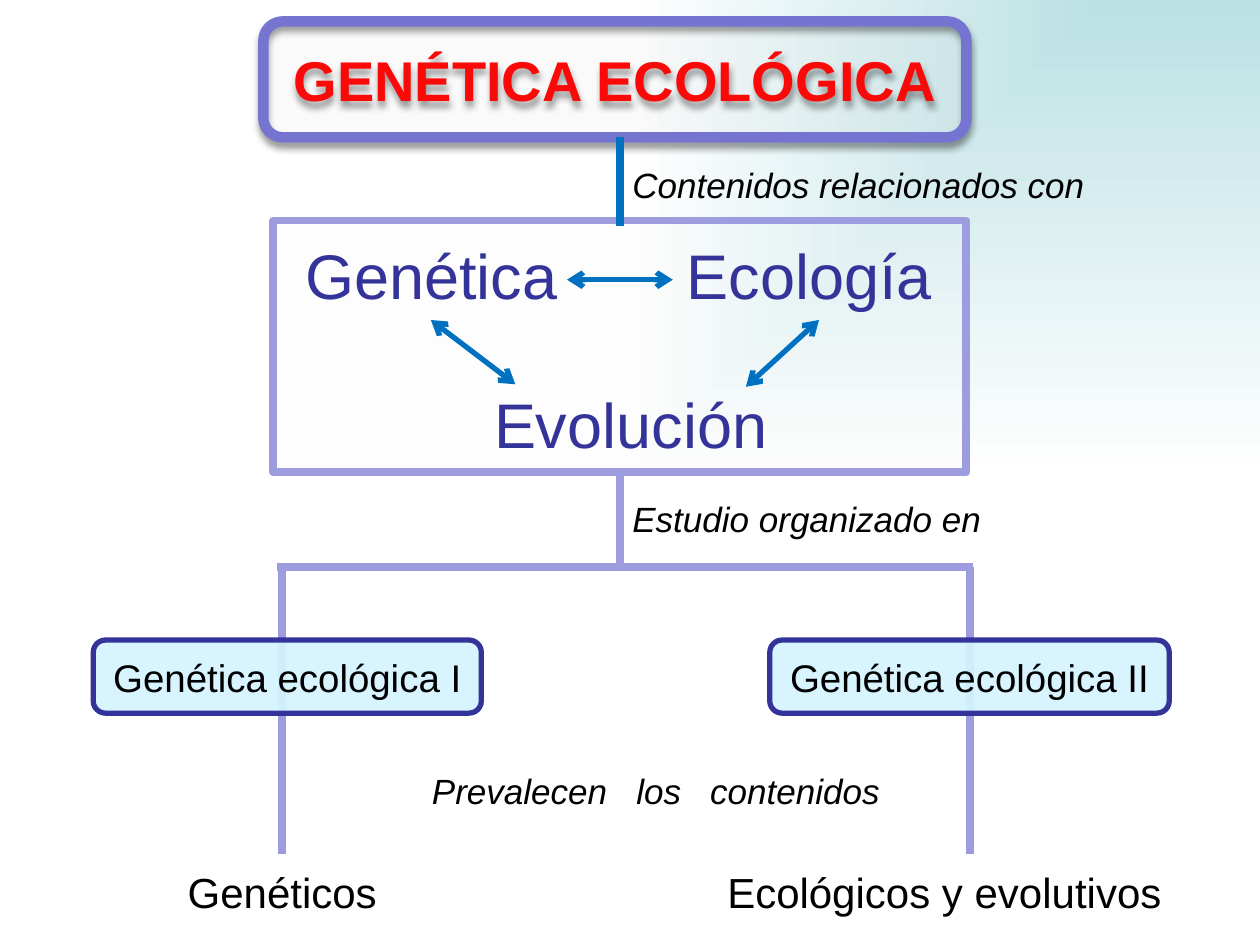
from lxml import etree
from pptx import Presentation
from pptx.dml.color import RGBColor
from pptx.enum.shapes import MSO_CONNECTOR, MSO_SHAPE
from pptx.enum.text import MSO_ANCHOR, MSO_AUTO_SIZE, PP_ALIGN
from pptx.oxml.ns import qn
from pptx.util import Inches, Pt

RECT, ROUND = MSO_SHAPE.RECTANGLE, MSO_SHAPE.ROUNDED_RECTANGLE
STRAIGHT = MSO_CONNECTOR.STRAIGHT
LEFT, CENTER = PP_ALIGN.LEFT, PP_ALIGN.CENTER
MIDDLE, TOP = MSO_ANCHOR.MIDDLE, MSO_ANCHOR.TOP
NO_FIT = MSO_AUTO_SIZE.NONE

BLACK = RGBColor(0x00, 0x00, 0x00)
WHITE = RGBColor(0xFF, 0xFF, 0xFF)
RED = RGBColor(0xFF, 0x00, 0x00)
TEAL = RGBColor(0xBB, 0xE0, 0xE3)
NAVY = RGBColor(0x33, 0x33, 0x99)
BLUE = RGBColor(0x00, 0x70, 0xC0)
LILAC = RGBColor(0x9C, 0x9C, 0xDF)
VIOLET = RGBColor(0x75, 0x75, 0xD1)
PALE = RGBColor(0xF2, 0xF2, 0xF2)
GREY = RGBColor(0xEA, 0xEA, 0xEA)
SKY = RGBColor(0xD5, 0xF4, 0xFF)

MID = 4.92
BAR = 4.5
FOOT = 6.78


def add(parent, tag, **attrs):
    return etree.SubElement(parent, qn(tag), attrs)


def paint_back(slide):
    """Fade from teal in the top right corner to white."""
    fill = slide.background.fill
    fill.gradient()
    for stop, color, place in zip(fill.gradient_stops, (TEAL, WHITE), (0, 1)):
        stop.color.rgb = color
        stop.position = place
    line = slide._element.find(".//" + qn("a:lin"))
    grad = line.getparent()
    grad.remove(line)
    fade = add(grad, "a:path", path="rect")
    add(fade, "a:fillToRect", l="100000", b="100000")


def drop_shadow(shape):
    shape.shadow.inherit = False
    effects = shape._element.spPr.find(qn("a:effectLst"))
    outer = add(effects, "a:outerShdw", blurRad=str(Pt(4)), dist=str(Pt(3)),
                dir="5400000", algn="t", rotWithShape="0")
    add(add(outer, "a:srgbClr", val=str(BLACK)), "a:alpha", val="40000")


def write(shape, text, size=20, color=BLACK, bold=False, italic=False,
          align=LEFT, anchor=TOP, gap=0):
    """Fill a shape with one line; gap widens each space by that many points."""
    frame = shape.text_frame
    frame.auto_size = NO_FIT
    frame.word_wrap = True
    frame.vertical_anchor = anchor
    para = frame.paragraphs[0]
    para.alignment = align
    parts = text.replace(" ", "| |").split("|") if gap else [text]
    for part in parts:
        run = para.add_run()
        run.text = part
        font = run.font
        font.name, font.size = "Arial", Pt(size)
        font.bold, font.italic = bold, italic
        font.color.rgb = color
        if part == " ":
            font._element.set("spc", str(gap * 100))


def label(slide, text, x, y, w, h, **style):
    box = slide.shapes.add_textbox(Inches(x), Inches(y), Inches(w), Inches(h))
    write(box, text, **style)


def panel(slide, kind, x, y, w, h, fill, opacity, line, width):
    shape = slide.shapes.add_shape(kind, Inches(x), Inches(y), Inches(w), Inches(h))
    shape.shadow.inherit = False
    shape.fill.solid()
    shape.fill.fore_color.rgb = fill
    tint = shape._element.spPr.find(qn("a:solidFill"))[0]
    add(tint, "a:alpha", val=str(opacity * 1000))
    shape.line.color.rgb = line
    shape.line.width = Pt(width)
    return shape


def link(slide, x1, y1, x2, y2, color=LILAC, width=4.5, heads=False):
    line = slide.shapes.add_connector(
        STRAIGHT, Inches(x1), Inches(y1), Inches(x2), Inches(y2))
    line.line.color.rgb = color
    line.line.width = Pt(width)
    if heads:
        for end in ("a:headEnd", "a:tailEnd"):
            add(line.line._ln, end, type="arrow")
    add(line._element.spPr, "a:effectLst")


def add_title(slide, text, x, y, w, h):
    frame = panel(slide, ROUND, x, y, w, h, GREY, 4, VIOLET, 6)
    drop_shadow(frame)
    title = slide.shapes.title
    title.left, title.top = Inches(x), Inches(y)
    title.width, title.height = Inches(w), Inches(h)
    write(title, text, size=32, color=RED, bold=True, align=CENTER, anchor=MIDDLE)
    drop_shadow(title)


def add_fields(slide):
    """Three fields tied to each other by two-way arrows."""
    panel(slide, RECT, 2.17, 1.75, 5.5, 2, PALE, 10, LILAC, 4.5)
    for text, x, y in (("Genética", 2.09, 1.83), ("Ecología", 5.09, 1.83),
                       ("Evolución", 3.67, 3.01)):
        label(slide, text, x, y, 2.67, 0.71, size=36, color=NAVY, align=CENTER)
    for ends in ((3.42, 2.54, 4.09, 3.05), (6.5, 2.54, 5.92, 3.07),
                 (4.5, 2.22, 5.34, 2.22)):
        link(slide, *ends, color=BLUE, width=3, heads=True)


def add_branch(slide, x, course, left, width, topic, start, span):
    link(slide, x, BAR, x, FOOT)
    box = panel(slide, ROUND, left, 5.08, width, 0.58, SKY, 93, NAVY, 3)
    write(box, course, size=22, align=CENTER, anchor=MIDDLE)
    label(slide, topic, start, 6.83, span, 0.5, size=24, align=CENTER)


def main():
    deck = Presentation()
    deck.slide_width, deck.slide_height = Inches(10), Inches(7.5)
    slide = deck.slides.add_slide(deck.slide_layouts[5])
    paint_back(slide)
    add_title(slide, "GENÉTICA ECOLÓGICA", 2.09, 0.17, 5.58, 0.92)
    add_fields(slide)
    link(slide, MID, 1.09, MID, 1.79, color=BLUE)
    link(slide, MID, 3.75, MID, BAR)
    link(slide, 2.2, BAR, 7.72, BAR)
    add_branch(slide, 2.24, "Genética ecológica I", 0.74, 3.08,
               "Genéticos", 1.24, 2)
    add_branch(slide, 7.7, "Genética ecológica II", 6.11, 3.17,
               "Ecológicos y evolutivos", 5.62, 3.75)
    label(slide, "Contenidos relacionados con", MID, 1.25, 4.58, 0.44, italic=True)
    label(slide, "Estudio organizado en", MID, 3.9, 4.58, 0.44, italic=True)
    label(slide, "Prevalecen los contenidos", 3.33, 6.06, 3.83, 0.44,
          italic=True, gap=11)
    deck.save("out.pptx")


if __name__ == "__main__":
    main()
